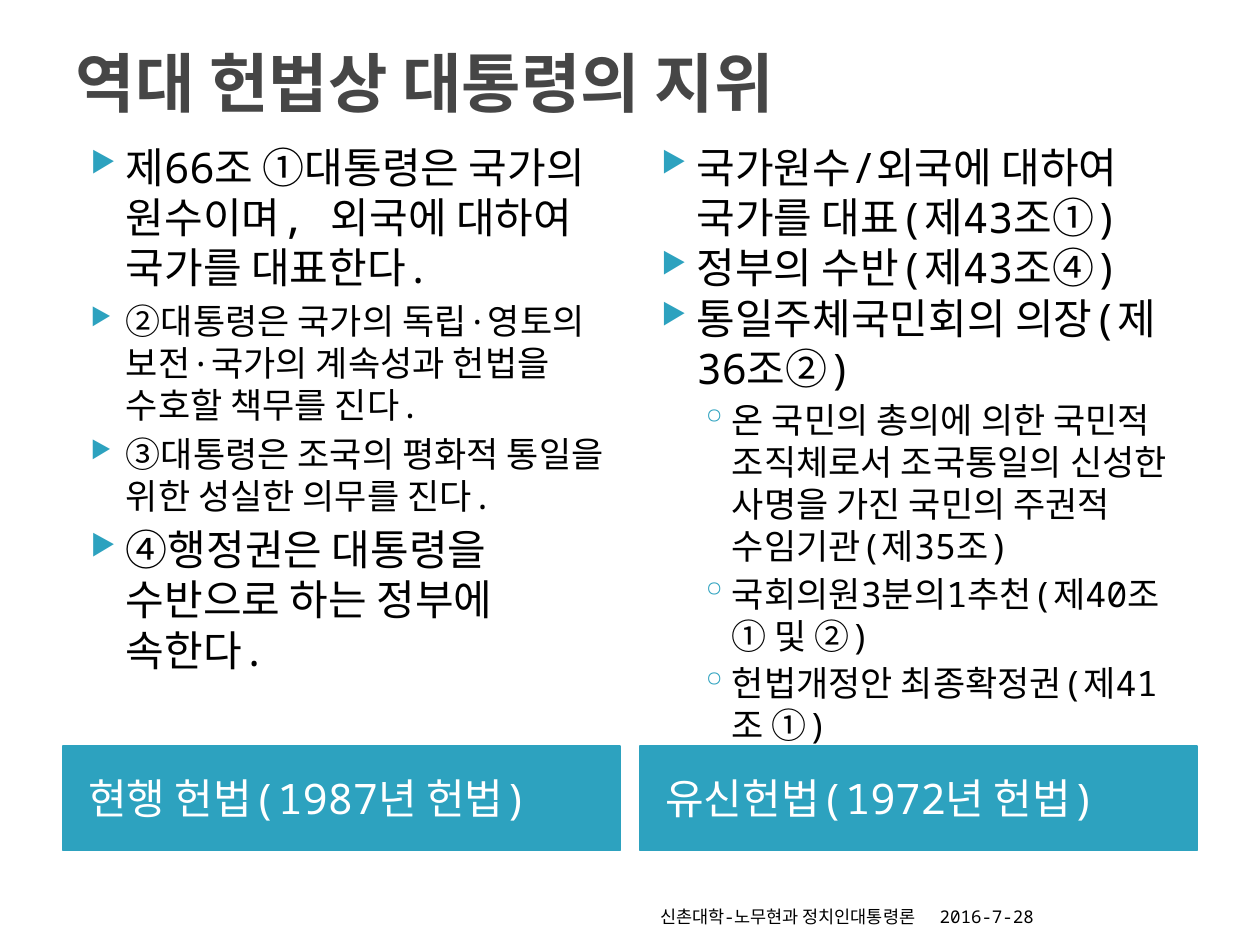
from dataclasses import dataclass

from lxml import etree
from pptx import Presentation
from pptx.dml.color import RGBColor
from pptx.enum import shapes, text
from pptx.oxml.ns import qn
from pptx.util import Pt


@dataclass(frozen=True)
class Theme:
    font: str = "Noto Sans Mono"
    accent: str = "2DA2BF"
    heading: str = "464646"
    body: str = "000000"
    inverse: str = "FFFFFF"
    title_size: float = 36.9
    large: float = 24
    medium: float = 20
    small: float = 10


@dataclass(frozen=True)
class Bullet:
    char: str
    left: float
    hanging: float
    level: int = 0
    percent: int = 100


THEME = Theme()
ARROW = Bullet("▶", 28.8, 20.16, percent=68)
RING = Bullet("◦", 48.96, 18, level=1)

CURRENT = [
    ("제66조 ①대통령은 국가의 원수이며, 외국에 대하여 국가를 대표한다.", ARROW, THEME.large, 4),
    ("②대통령은 국가의 독립·영토의 보전·국가의 계속성과 헌법을 수호할 책무를 진다.", ARROW, THEME.medium, 4),
    ("③대통령은 조국의 평화적 통일을 위한 성실한 의무를 진다.", ARROW, THEME.medium, 4),
    ("④행정권은 대통령을 수반으로 하는 정부에 속한다.", ARROW, THEME.large, 4),
]
YUSIN = [
    ("국가원수/외국에 대하여 국가를 대표(제43조①)", ARROW, THEME.large, 0),
    ("정부의 수반(제43조④)", ARROW, THEME.large, 0),
    ("통일주체국민회의 의장(제36조②)", ARROW, THEME.large, 0),
    ("온 국민의 총의에 의한 국민적 조직체로서 조국통일의 신성한 사명을 가진 "
     "국민의 주권적 수임기관(제35조)", RING, THEME.medium, 3.2),
    ("국회의원3분의1추천(제40조① 및 ②)", RING, THEME.medium, 3.2),
    ("헌법개정안 최종확정권(제41조 ①)", RING, THEME.medium, 3.2),
]


def place(sp, box):
    sp.left, sp.top, sp.width, sp.height = (Pt(v) for v in box)


def format_text(p, size, color, bold=False):
    for r in p.runs:
        r.font.name = THEME.font
        r.font.size = Pt(size)
        r.font.bold = bold
        r.font.color.rgb = RGBColor.from_string(color)


def set_bullet(p, bullet):
    p.level = bullet.level
    props = p._p.get_or_add_pPr()
    props.set("marL", str(Pt(bullet.left)))
    props.set("indent", str(-Pt(bullet.hanging)))
    color = etree.SubElement(props, qn("a:buClr"))
    etree.SubElement(color, qn("a:srgbClr")).set("val", THEME.accent)
    etree.SubElement(props, qn("a:buSzPct")).set("val", str(bullet.percent * 1000))
    etree.SubElement(props, qn("a:buChar")).set("char", bullet.char)


def add_title(s, box, label):
    sp = s.shapes.title
    place(sp, box)
    tf = sp.text_frame
    tf.text = label
    tf.auto_size = text.MSO_AUTO_SIZE.NONE
    tf.vertical_anchor = text.MSO_ANCHOR.MIDDLE
    p = tf.paragraphs[0]
    p.alignment = text.PP_ALIGN.LEFT
    format_text(p, THEME.title_size, THEME.heading, bold=True)


def add_articles(s, box, articles):
    tf = s.shapes.add_textbox(*(Pt(v) for v in box)).text_frame
    tf.word_wrap = True
    for i, (label, bullet, size, gap) in enumerate(articles):
        p = tf.add_paragraph() if i else tf.paragraphs[0]
        p.text = label
        p.space_before = Pt(gap if i else 0)
        set_bullet(p, bullet)
        format_text(p, size, THEME.body)


def add_band(s, box, label):
    sp = s.shapes.add_shape(shapes.MSO_SHAPE.RECTANGLE, *(Pt(v) for v in box))
    sp.shadow.inherit = False
    sp.fill.solid()
    sp.fill.fore_color.rgb = RGBColor.from_string(THEME.accent)
    sp.line.color.rgb = RGBColor.from_string(THEME.accent)
    sp.line.width = Pt(0.75)
    tf = sp.text_frame
    tf.text = label
    tf.word_wrap = True
    tf.margin_left = Pt(14.4)
    tf.vertical_anchor = text.MSO_ANCHOR.MIDDLE
    p = tf.paragraphs[0]
    p.alignment = text.PP_ALIGN.LEFT
    format_text(p, THEME.large, THEME.inverse)


def add_footer(s, box, label, align):
    tf = s.shapes.add_textbox(*(Pt(v) for v in box)).text_frame
    tf.text = label
    tf.word_wrap = True
    tf.vertical_anchor = text.MSO_ANCHOR.BOTTOM
    p = tf.paragraphs[0]
    p.alignment = align
    format_text(p, THEME.small, THEME.body)


def main():
    prs = Presentation()
    prs.slide_width, prs.slide_height = Pt(720), Pt(540)
    s = prs.slides.add_slide(prs.slide_layouts[5])

    add_title(s, (36, 21.6, 648, 50.4), "역대 헌법상 대통령의 지위")
    width = 318.24
    for left, label in ((36, "현행 헌법(1987년 헌법)"), (365.76, "유신헌법(1972년 헌법)")):
        add_band(s, (left, 426.24, width, 59.76), label)
    for left, articles in ((36, CURRENT), (362.16, YUSIN)):
        add_articles(s, (left, 77.04, width, 347.04), articles)

    add_footer(s, (529.92, 504.72, 151.2, 28.8), "2016-7-28", text.PP_ALIGN.LEFT)
    add_footer(s, (344.88, 504.72, 185.04, 28.8), "신촌대학-노무현과 정치인대통령론", text.PP_ALIGN.RIGHT)
    prs.save("out.pptx")


if __name__ == "__main__":
    main()
